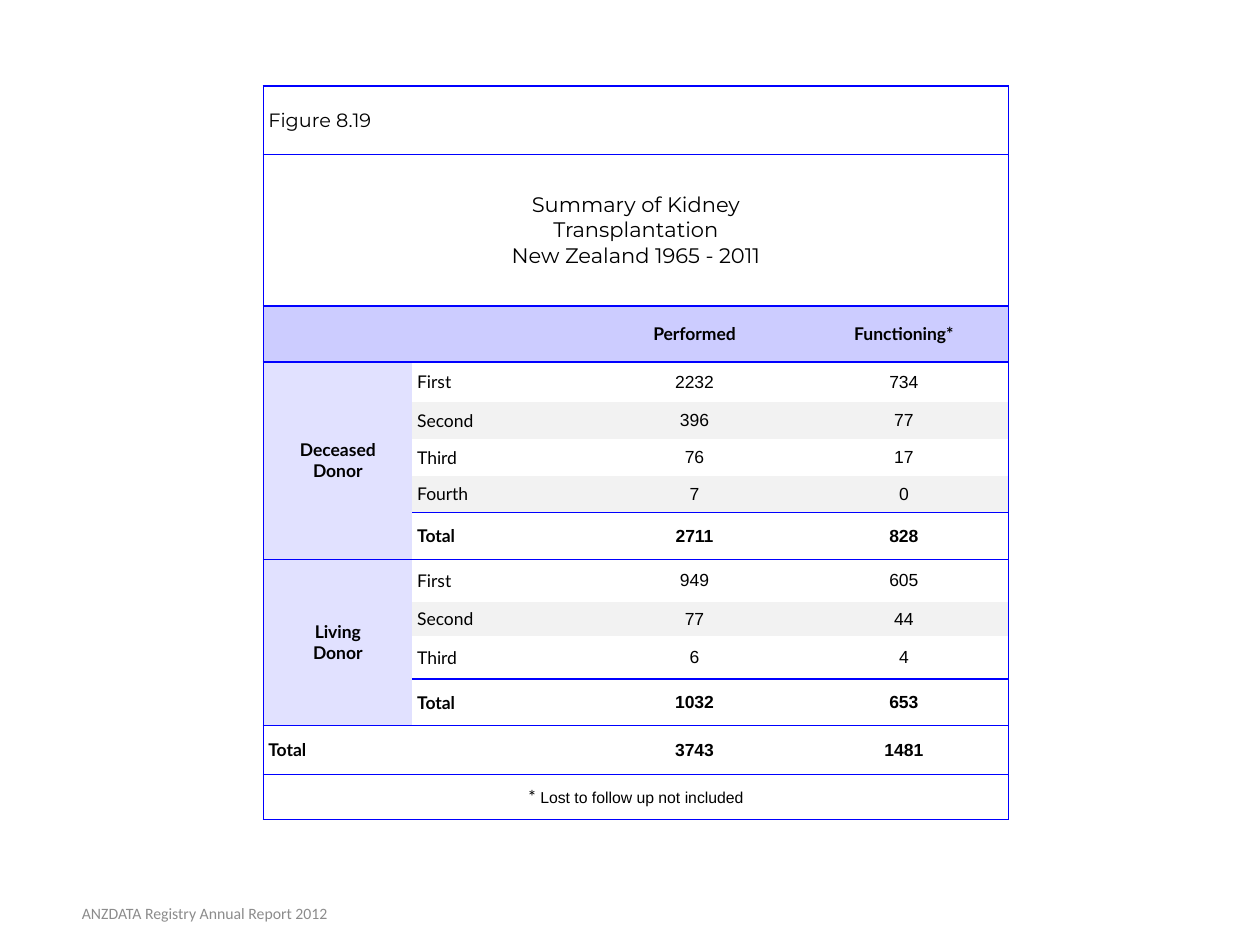
from lxml import etree
from pptx import Presentation
from pptx.dml.color import RGBColor
from pptx.enum.text import MSO_ANCHOR, PP_ALIGN
from pptx.oxml.ns import qn
from pptx.util import Cm, Pt

LEFT, CENTER = PP_ALIGN.LEFT, PP_ALIGN.CENTER
MIDDLE = MSO_ANCHOR.MIDDLE

COLORS = {
    "text": "000000",
    "rule": "0000FF",
    "header": "CCCCFF",
    "donor": "E1E1FF",
    "band": "F2F2F2",
    "footer": "8C8C8C",
}

COLUMN_WIDTHS = [3.0, 3.58, 4.22, 4.22]
ROW_HEIGHTS = [1.39, 3.05, 1.13, 0.81, 0.74, 0.74, 0.75,
               0.94, 0.86, 0.69, 0.86, 0.94, 0.99, 0.9]
TITLE = "Summary of Kidney\nTransplantation\nNew Zealand 1965 - 2011"
DONORS = [
    ("Deceased\nDonor", [("First", "2232", "734"), ("Second", "396", "77"),
                         ("Third", "76", "17"), ("Fourth", "7", "0"),
                         ("Total", "2711", "828")]),
    ("Living\nDonor", [("First", "949", "605"), ("Second", "77", "44"),
                       ("Third", "6", "4"), ("Total", "1032", "653")]),
]
FIGURE_ROW, TITLE_ROW, HEADER_ROW, FIRST_DONOR_ROW = range(4)
TOTAL_ROW, NOTE_ROW = 12, 13
FULL_RULES = {0, 1, 2, 3, 8, 12, 13, 14}
SUBTOTAL_RULES = {7, 11}


def write(frame, text, font="Lato", size=10, bold=False, color="text", align=LEFT):
    for index, line in enumerate(text.split("\n")):
        paragraph = frame.add_paragraph() if index else frame.paragraphs[-1]
        paragraph.alignment = align
        run = paragraph.add_run()
        run.text = line
        run.font.name = font
        run.font.size = Pt(size)
        run.font.bold = bold
        run.font.color.rgb = RGBColor.from_string(COLORS[color])


def paint(cell, color):
    cell.fill.solid()
    cell.fill.fore_color.rgb = RGBColor.from_string(COLORS[color])


def add_border(cell, side, weight):
    properties = cell._tc.get_or_add_tcPr()
    line = etree.SubElement(properties, qn(f"a:ln{side}"), w=str(Pt(weight)))
    if weight:
        fill = etree.SubElement(line, qn("a:solidFill"))
        etree.SubElement(fill, qn("a:srgbClr"), val=COLORS["rule"])
    else:
        etree.SubElement(line, qn("a:noFill"))


def rule_weight(edge, column):
    if edge in FULL_RULES:
        return 1
    return 0.75 if edge in SUBTOTAL_RULES and column else 0


def merge_regions(table):
    last = len(COLUMN_WIDTHS) - 1
    for row in (FIGURE_ROW, TITLE_ROW, NOTE_ROW):
        table.cell(row, 0).merge(table.cell(row, last))
    for row in (HEADER_ROW, TOTAL_ROW):
        table.cell(row, 0).merge(table.cell(row, 1))
    top = FIRST_DONOR_ROW
    for _, grafts in DONORS:
        table.cell(top, 0).merge(table.cell(top + len(grafts) - 1, 0))
        top += len(grafts)


def format_cells(table):
    for row in range(len(ROW_HEIGHTS)):
        for column in range(len(COLUMN_WIDTHS)):
            cell = table.cell(row, column)
            cell.vertical_anchor = MIDDLE
            cell.margin_left = cell.margin_right = Cm(0.1)
            cell.margin_top = cell.margin_bottom = Cm(0.03)
            end = column + cell.span_width
            add_border(cell, "L", 0 if column else 1)
            add_border(cell, "R", 1 if end == len(COLUMN_WIDTHS) else 0)
            add_border(cell, "T", rule_weight(row, column))
            add_border(cell, "B", rule_weight(row + cell.span_height, column))
            if row == HEADER_ROW:
                paint(cell, "header")
            else:
                cell.fill.background()


def fill_donors(table):
    row = FIRST_DONOR_ROW
    for donor, grafts in DONORS:
        donor_cell = table.cell(row, 0)
        paint(donor_cell, "donor")
        write(donor_cell.text_frame, donor, bold=True, align=CENTER)
        for index, (graft, *counts) in enumerate(grafts):
            total = graft == "Total"
            write(table.cell(row, 1).text_frame, graft, bold=total)
            for column, count in enumerate(counts, 2):
                write(table.cell(row, column).text_frame, count,
                      font="Arial", bold=total, align=CENTER)
            if index % 2 and not total:
                for column in range(1, len(COLUMN_WIDTHS)):
                    paint(table.cell(row, column), "band")
            row += 1


def add_summary_table(slide, left, top, width, height):
    table = slide.shapes.add_table(
        len(ROW_HEIGHTS), len(COLUMN_WIDTHS),
        Cm(left), Cm(top), Cm(width), Cm(height)).table
    table.first_row = False
    table.horz_banding = False
    for column, column_width in zip(table.columns, COLUMN_WIDTHS):
        column.width = Cm(column_width)
    for row, row_height in zip(table.rows, ROW_HEIGHTS):
        row.height = Cm(row_height)
    merge_regions(table)
    format_cells(table)

    write(table.cell(FIGURE_ROW, 0).text_frame, "Figure 8.19",
          font="Montserrat", size=11)
    write(table.cell(TITLE_ROW, 0).text_frame, TITLE,
          font="Montserrat", size=12, align=CENTER)
    for column, heading in enumerate(["Performed", "Functioning*"], 2):
        write(table.cell(HEADER_ROW, column).text_frame, heading,
              bold=True, align=CENTER)
    fill_donors(table)
    write(table.cell(TOTAL_ROW, 0).text_frame, "Total", bold=True)
    for column, total in enumerate(["3743", "1481"], 2):
        write(table.cell(TOTAL_ROW, column).text_frame, total,
              font="Arial", bold=True, align=CENTER)
    note = table.cell(NOTE_ROW, 0).text_frame
    write(note, "* ", align=CENTER)
    write(note, "Lost to follow up not included", font="Arial", size=9, align=CENTER)


def add_footer(slide, left, top, width, height):
    footer = slide.shapes.add_textbox(Cm(left), Cm(top), Cm(width), Cm(height)).text_frame
    footer.word_wrap = True
    footer.vertical_anchor = MIDDLE
    write(footer, "ANZDATA Registry Annual Report 2012",
          font="Calibri", size=9, color="footer", align=CENTER)


def main():
    presentation = Presentation()
    presentation.slide_width = Cm(25.4)
    presentation.slide_height = Cm(19.05)
    slide = presentation.slides.add_slide(presentation.slide_layouts[6])
    add_summary_table(slide, 5.31, 1.73, sum(COLUMN_WIDTHS), sum(ROW_HEIGHTS))
    add_footer(slide, 0.1, 17.91, 8.05, 1.02)
    presentation.save("out.pptx")


if __name__ == "__main__":
    main()
